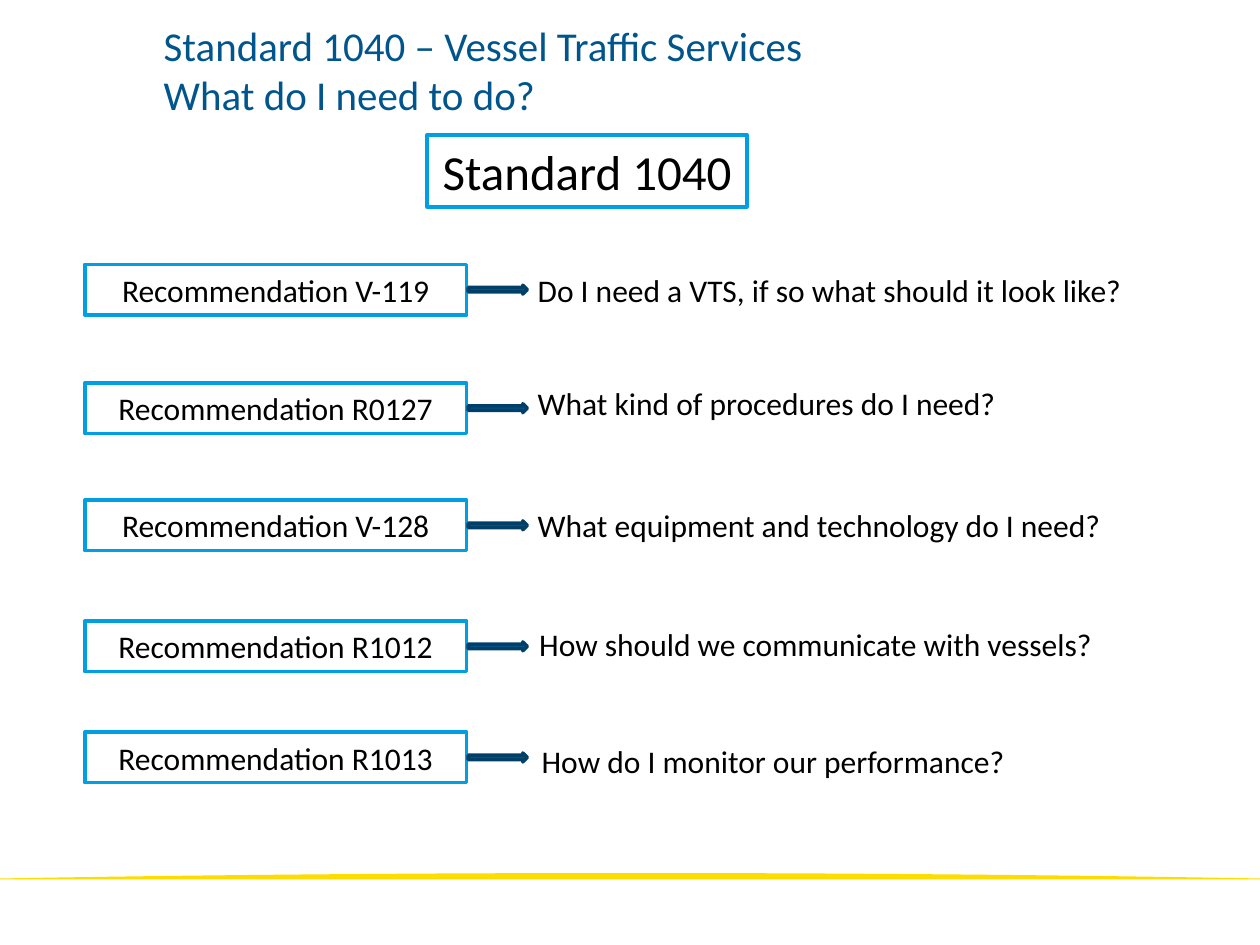
from pptx import Presentation
from pptx.dml.color import RGBColor
from pptx.enum.shapes import MSO_SHAPE
from pptx.enum.text import MSO_ANCHOR, MSO_AUTO_SIZE, PP_ALIGN
from pptx.util import Cm, Pt

# Content
TITLE = "Standard 1040 – Vessel Traffic Services\nWhat do I need to do?"
STANDARD = "Standard 1040"
# (recommendation, its top, question, its left, its top), in cm
ROWS = [
    ("Recommendation V-119", 5.33, "Do I need a VTS, if so what should it look like?", 10.59, 5.33),
    ("Recommendation R0127", 7.72, "What kind of procedures do I need?", 10.59, 7.62),
    ("Recommendation V-128", 10.08, "What equipment and technology do I need?", 10.59, 10.08),
    ("Recommendation R1012", 12.52, "How should we communicate with vessels?", 10.62, 12.47),
    ("Recommendation R1013", 14.76, "How do I monitor our performance?", 10.67, 14.83),
]

FONT = "Calibri"
WHITE = RGBColor(0xFF, 0xFF, 0xFF)
BLACK = RGBColor(0x00, 0x00, 0x00)
BLUE = RGBColor(0x00, 0x55, 0x8C)
NAVY = RGBColor(0x00, 0x3F, 0x68)
SKY = RGBColor(0x00, 0x9F, 0xE3)
YELLOW = RGBColor(0xFF, 0xDC, 0x00)

# Row layout, in cm
BOX_LEFT, BOX_WIDTH, ROW_HEIGHT = 1.71, 7.7, 1.02
QUESTION_WIDTH = 12.6
ARROW_LEFT, ARROW_WIDTH, ARROW_HEIGHT = 9.44, 1.19, 0.18

# Yellow band, in cm
BAND_WIDTH, BAND_EDGE, BAND_CREST, BAND_BOTTOM = 25.43, 17.71, 17.6, 17.73
BAND_STEPS = 40


def write(shape, text, size, color, align=PP_ALIGN.LEFT):
    frame = shape.text_frame
    frame.word_wrap = True
    para = frame.paragraphs[0]
    para.text = text
    para.alignment = align
    para.font.name = FONT
    para.font.size = Pt(size)
    para.font.color.rgb = color
    return frame


def paint(shape, fill, line=None):
    shape.shadow.inherit = False
    shape.fill.solid()
    shape.fill.fore_color.rgb = fill
    if line is None:
        shape.line.fill.background()
    else:
        shape.line.color.rgb = line
        shape.line.width = Pt(2)


def add_box(page, text, left, top, width, height, size):
    box = page.shapes.add_shape(
        MSO_SHAPE.RECTANGLE, Cm(left), Cm(top), Cm(width), Cm(height))
    paint(box, WHITE, SKY)
    frame = write(box, text, size, BLACK, PP_ALIGN.CENTER)
    frame.auto_size = MSO_AUTO_SIZE.SHAPE_TO_FIT_TEXT


def add_band(page):
    # The upper edge rises to its crest in the middle of the page
    edge = []
    for step in range(BAND_STEPS + 1):
        share = step / BAND_STEPS
        rise = (BAND_EDGE - BAND_CREST) * (1 - (2 * share - 1) ** 2)
        edge.append((Cm(BAND_WIDTH * share), Cm(BAND_EDGE - rise)))
    builder = page.shapes.build_freeform(Cm(0), Cm(BAND_BOTTOM))
    builder.add_line_segments(edge + [(Cm(BAND_WIDTH), Cm(BAND_BOTTOM))], close=True)
    paint(builder.convert_to_shape(), YELLOW)


def add_title(page):
    title = page.shapes.add_textbox(Cm(3.3), Cm(0.79), Cm(22.86), Cm(1.6))
    frame = write(title, TITLE, 23.4, BLUE)
    frame.vertical_anchor = MSO_ANCHOR.BOTTOM
    frame.margin_left = frame.margin_right = 0
    frame.margin_top = frame.margin_bottom = 0


def add_row(page, name, box_top, question, question_left, question_top):
    add_box(page, name, BOX_LEFT, box_top, BOX_WIDTH, ROW_HEIGHT, 18)
    label = page.shapes.add_textbox(
        Cm(question_left), Cm(question_top), Cm(QUESTION_WIDTH), Cm(ROW_HEIGHT))
    frame = write(label, question, 18, BLACK)
    frame.auto_size = MSO_AUTO_SIZE.SHAPE_TO_FIT_TEXT
    arrow_top = box_top + (ROW_HEIGHT - ARROW_HEIGHT) / 2
    arrow = page.shapes.add_shape(
        MSO_SHAPE.RIGHT_ARROW, Cm(ARROW_LEFT), Cm(arrow_top),
        Cm(ARROW_WIDTH), Cm(ARROW_HEIGHT))
    paint(arrow, BLUE, NAVY)


def main():
    deck = Presentation()
    deck.slide_width, deck.slide_height = Cm(25.4), Cm(19.05)
    page = deck.slides.add_slide(deck.slide_layouts[6])
    add_band(page)
    add_title(page)
    add_box(page, STANDARD, 8.61, 2.72, 6.45, 1.45, 28)
    for row in ROWS:
        add_row(page, *row)
    deck.save("out.pptx")


if __name__ == "__main__":
    main()
